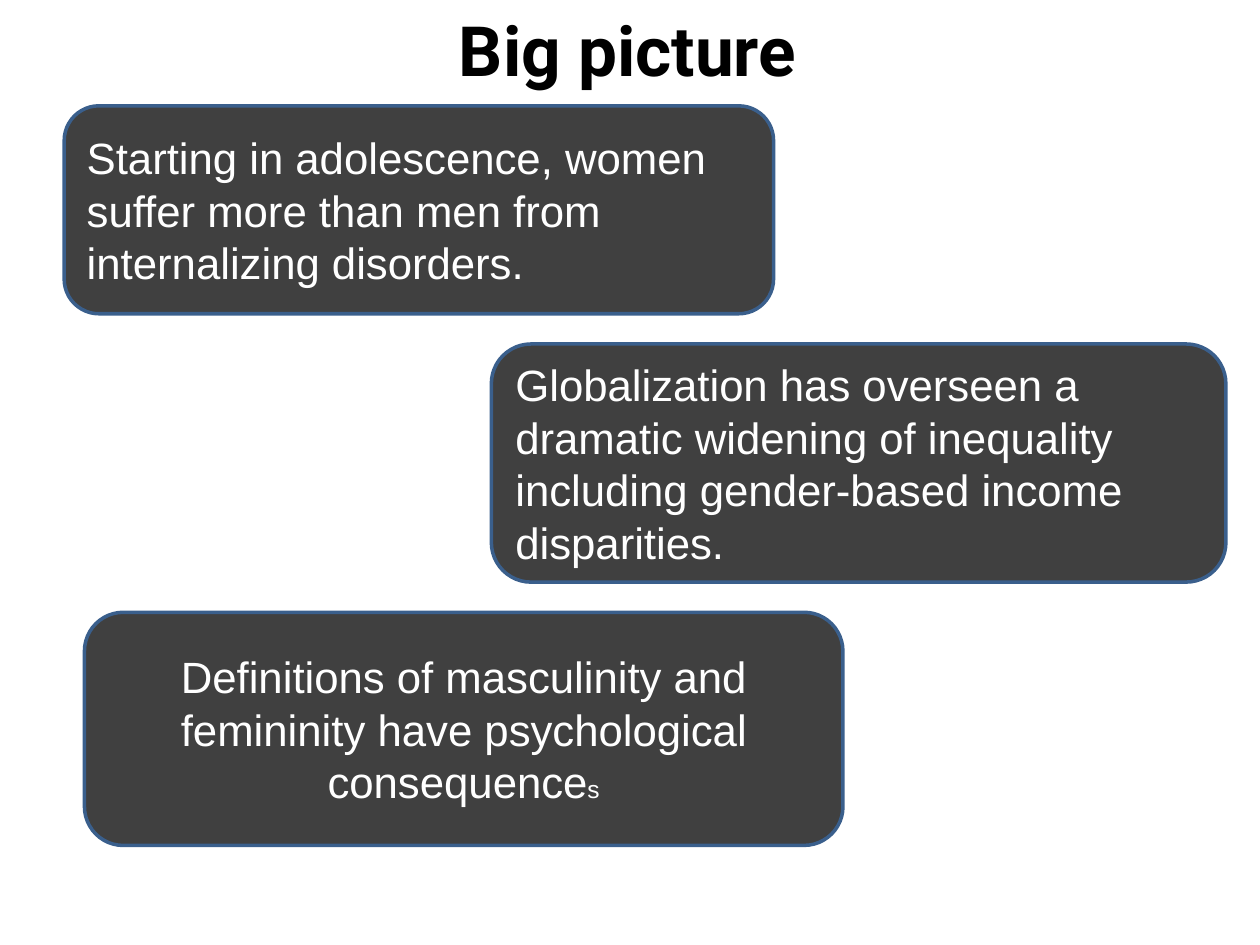
from pptx import Presentation
from pptx.dml.color import RGBColor
from pptx.enum.shapes import MSO_SHAPE
from pptx.enum.text import MSO_ANCHOR, MSO_AUTO_SIZE, PP_ALIGN
from pptx.util import Inches, Pt

SLIDE_WIDTH, SLIDE_HEIGHT = Inches(10), Inches(7.5)
TITLE_FONT = {"name": "Roboto", "size": Pt(39.6), "bold": True}
BODY_FONT = {"name": "Arial", "size": Pt(25)}
SMALL_FONT = {"name": "Arial", "size": Pt(14)}

# Left, top, width and height in percent of the slide
TITLE_AREA = (5.5, 0, 90, 10.4)
STATEMENTS = [
    ((5.1, 11.2, 56.3, 22), PP_ALIGN.LEFT,
     [("Starting in adolescence, women suffer more than men from "
       "internalizing disorders.", BODY_FONT)]),
    ((39, 36.4, 58.3, 25.2), PP_ALIGN.LEFT,
     [("Globalization has overseen a dramatic widening of inequality "
       "including gender-based income disparities.", BODY_FONT)]),
    ((6.7, 64.8, 60.2, 24.67), PP_ALIGN.CENTER,
     [("Definitions of masculinity and femininity have psychological "
       "consequence", BODY_FONT), ("s", SMALL_FONT)]),
]


def color(value):
    return RGBColor.from_string(value)


def to_lengths(area):
    """Turn percentages of the slide into left, top, width and height."""
    sides = (SLIDE_WIDTH, SLIDE_HEIGHT) * 2
    return [round(side * share / 100) for side, share in zip(sides, area)]


def set_attributes(target, values):
    for name, value in values.items():
        setattr(target, name, value)


def write_text(shape, runs, alignment, font_color):
    set_attributes(shape.text_frame, {
        "word_wrap": True,
        "auto_size": MSO_AUTO_SIZE.NONE,
        "vertical_anchor": MSO_ANCHOR.MIDDLE,
    })
    paragraph = shape.text_frame.paragraphs[0]
    paragraph.alignment = alignment
    for text, font in runs:
        run = paragraph.add_run()
        run.text = text
        set_attributes(run.font, font)
        run.font.color.rgb = color(font_color)


def add_title(slide, text):
    title = slide.shapes.title
    places = zip(("left", "top", "width", "height"), to_lengths(TITLE_AREA))
    set_attributes(title, dict(places))
    write_text(title, [(text, TITLE_FONT)], PP_ALIGN.CENTER, "000000")


def add_statement(slide, area, alignment, runs):
    box = slide.shapes.add_shape(MSO_SHAPE.ROUNDED_RECTANGLE, *to_lengths(area))
    box.shadow.inherit = False
    box.fill.solid()
    box.fill.fore_color.rgb = color("404040")
    box.line.color.rgb = color("3A5F8C")
    box.line.width = Pt(2)
    write_text(box, runs, alignment, "FFFFFF")


def main():
    presentation = Presentation()
    set_attributes(presentation, {"slide_width": SLIDE_WIDTH,
                                  "slide_height": SLIDE_HEIGHT})
    slide = presentation.slides.add_slide(presentation.slide_layouts[5])
    add_title(slide, "Big picture ")
    for area, alignment, runs in STATEMENTS:
        add_statement(slide, area, alignment, runs)
    presentation.save("out.pptx")


if __name__ == "__main__":
    main()
